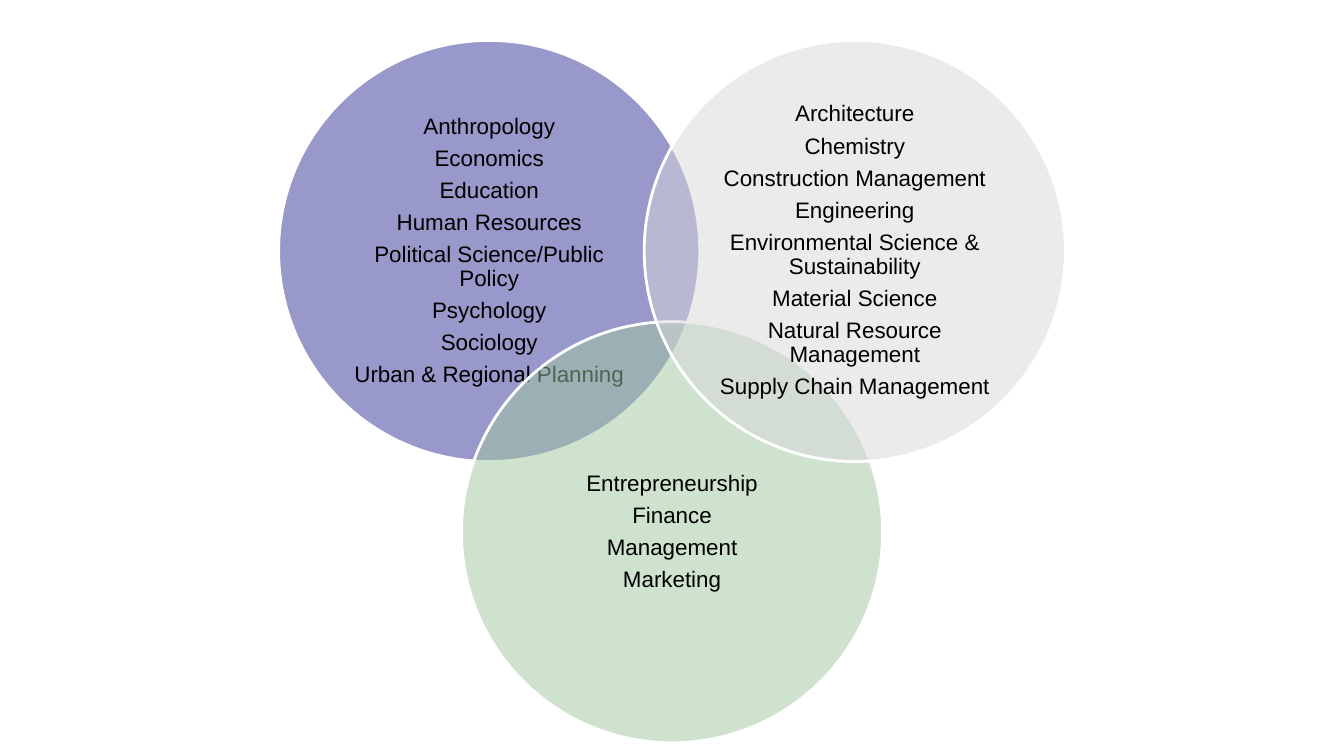
from dataclasses import dataclass
from math import sqrt

from lxml import etree
from pptx import Presentation, util as u
from pptx.dml.color import RGBColor
from pptx.enum import shapes, text
from pptx.oxml.ns import qn
from pptx.shapes.shapetree import GroupShapes

WIDTH, HEIGHT = u.Inches(13.33), u.Inches(7.5)
COLUMN, ROW = WIDTH / 100, HEIGHT / 100
DIAMETER = 55.7 * ROW
INSCRIBED_SIDE = DIAMETER / sqrt(2)

VIOLET = RGBColor(0x33, 0x33, 0x99)
GREEN = RGBColor(0x9F, 0xC6, 0x9F)
GREY = RGBColor(0xD9, 0xD9, 0xD9)
WHITE = RGBColor(0xFF, 0xFF, 0xFF)
BLACK = RGBColor(0x00, 0x00, 0x00)

FONT_SIZE = 16
OPACITY = 50


@dataclass(frozen=True)
class Field:
    """A circle centred on a grid column and row, with its disciplines."""
    column: float
    row: float
    color: RGBColor
    disciplines: tuple[str, ...]


FIELDS = (
    Field(36.4, 33.2, VIOLET, (
        "Anthropology", "Economics", "Education", "Human Resources",
        "Political Science/Public Policy", "Psychology", "Sociology",
        "Urban & Regional Planning")),
    Field(50, 70.4, GREEN, (
        "Entrepreneurship", "Finance", "Management", "Marketing")),
    Field(63.6, 33.2, GREY, (
        "Architecture", "Chemistry", "Construction Management", "Engineering",
        "Environmental Science & Sustainability", "Material Science",
        "Natural Resource Management", "Supply Chain Management")),
)


def centred_square(field: Field, side: float) -> tuple[int, int, int, int]:
    """Left, top, width and height of a square around the field's centre."""
    left = field.column * COLUMN - side / 2
    top = field.row * ROW - side / 2
    return round(left), round(top), round(side), round(side)


def draw_circle(venn: GroupShapes, field: Field) -> None:
    circle = venn.add_shape(shapes.MSO_SHAPE.OVAL, *centred_square(field, DIAMETER))
    circle.shadow.inherit = False
    circle.fill.solid()
    circle.fill.fore_color.rgb = field.color
    color = circle.fill._xPr.find(qn("a:solidFill"))[0]
    etree.SubElement(color, qn("a:alpha"), val=str(OPACITY * 1000))
    circle.line.color.rgb = WHITE
    circle.line.width = u.Pt(2)


def draw_disciplines(venn: GroupShapes, field: Field) -> None:
    frame = venn.add_textbox(*centred_square(field, INSCRIBED_SIDE)).text_frame
    frame.word_wrap = True
    frame.vertical_anchor = text.MSO_ANCHOR.MIDDLE
    frame.margin_left = frame.margin_right = u.Inches(0.07)
    frame.margin_top = frame.margin_bottom = u.Inches(0.07)
    for index, discipline in enumerate(field.disciplines):
        paragraph = frame.add_paragraph() if index else frame.paragraphs[0]
        paragraph.alignment = text.PP_ALIGN.CENTER
        paragraph.line_spacing = 0.9
        paragraph.space_after = u.Pt(0.35 * FONT_SIZE)
        run = paragraph.add_run()
        run.text = discipline
        run.font.name = "Arial"
        run.font.size = u.Pt(FONT_SIZE)
        run.font.color.rgb = BLACK


def main() -> None:
    deck = Presentation()
    deck.slide_width, deck.slide_height = WIDTH, HEIGHT
    slide = deck.slides.add_slide(deck.slide_layouts[6])
    venn = slide.shapes.add_group_shape().shapes
    for field in FIELDS:
        draw_circle(venn, field)
        draw_disciplines(venn, field)
    deck.save("out.pptx")


if __name__ == "__main__":
    main()
